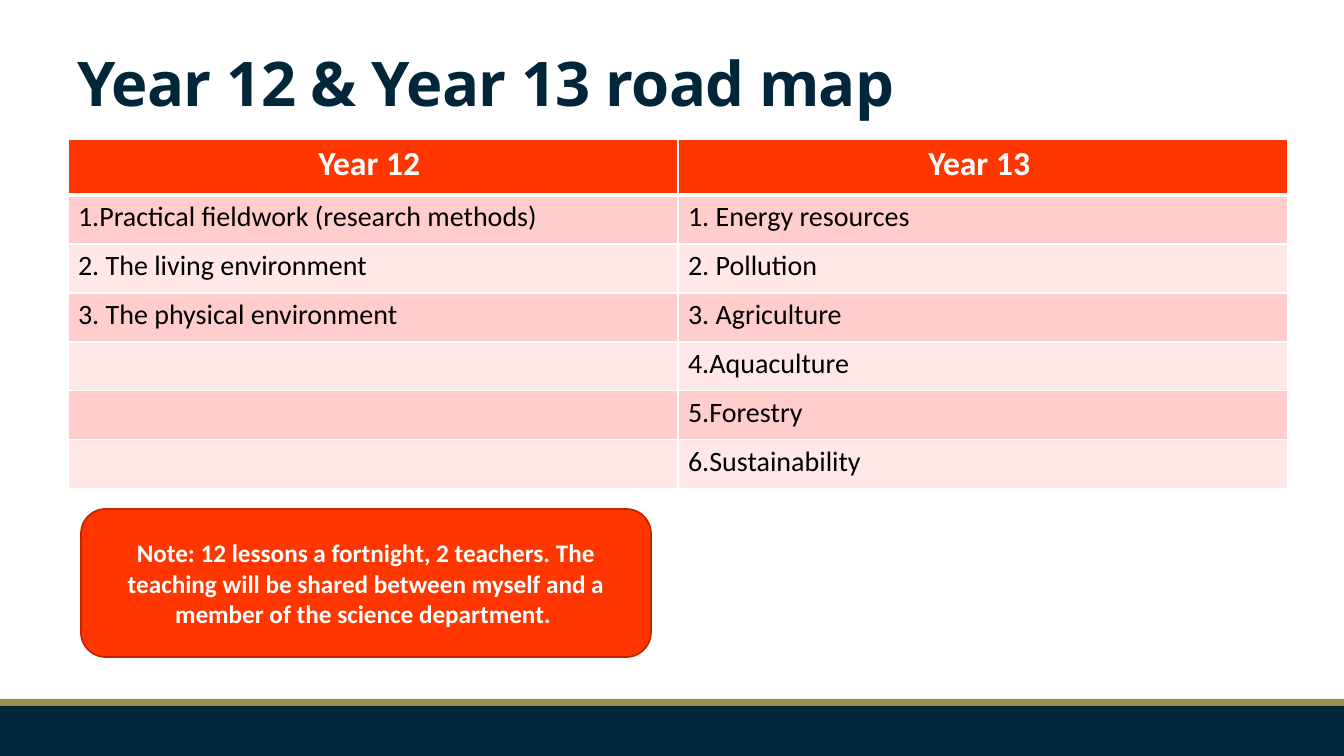
"""Build the Year 12 and Year 13 road map slide."""
from itertools import zip_longest

from lxml.etree import SubElement
from pptx import Presentation
from pptx.dml.color import RGBColor
from pptx.enum.shapes import MSO_SHAPE as Shape
from pptx.enum.text import MSO_ANCHOR as Anchor, PP_ALIGN as Align
from pptx.oxml import parse_xml
from pptx.oxml.ns import nsdecls, qn
from pptx.util import Pt

WIDTH, HEIGHT = 1344, 756
PX = 12192000 / WIDTH
COLORS = {
    "navy": "002639", "gold": "998F4D", "orange": "FF3600", "rust": "BD2800",
    "pink": "FFCECC", "blush": "FFE8E7", "white": "FFFFFF", "black": "000000",
}
YEAR_12 = ["1.Practical fieldwork (research methods)", "2. The living environment",
           "3. The physical environment"]
YEAR_13 = ["1. Energy resources", "2. Pollution", "3. Agriculture",
           "4.Aquaculture", "5.Forestry", "6.Sustainability"]
NOTE = ("Note: 12 lessons a fortnight, 2 teachers. The teaching will be shared "
        "between myself and a member of the science department. ")


def px(*lengths):
    return [round(length * PX) for length in lengths]


def color(name):
    return RGBColor.from_string(COLORS[name])


def write(frame, text, size, ink, bold=True, align=Align.LEFT, font="Calibri"):
    paragraph = frame.paragraphs[0]
    paragraph.alignment = align
    run = paragraph.add_run()
    run.text = text
    run.font.name = font
    run.font.size = Pt(size)
    run.font.bold = bold
    run.font.color.rgb = color(ink)
    return run


def add_block(slide, kind, box, fill, outline=None):
    block = slide.shapes.add_shape(kind, *px(*box))
    block.shadow.inherit = False
    block.fill.solid()
    block.fill.fore_color.rgb = color(fill)
    if outline:
        block.line.color.rgb = color(outline)
        block.line.width = Pt(1.25)
    else:
        block.line.fill.background()
    return block


def set_title(slide, text):
    title = slide.shapes.title
    title.left, title.top, title.width, title.height = px(67, 0, 1092, 124)
    title.text_frame.vertical_anchor = Anchor.BOTTOM
    title.text_frame.word_wrap = True
    run = write(title.text_frame, text, 44, "navy", font="Open Sans")
    run.font._element.set("spc", "-50")
    title.text_frame.paragraphs[0].line_spacing = 0.85


def set_borders(cell, top, bottom):
    properties = cell._tc.get_or_add_tcPr()
    sides = [("lnL", 1), ("lnR", 1), ("lnT", top), ("lnB", bottom)]
    for index, (side, points) in enumerate(sides):
        border = parse_xml(f'<a:{side} {nsdecls("a")} w="{Pt(points)}"/>')
        fill = SubElement(border, qn("a:solidFill"))
        SubElement(fill, qn("a:srgbClr")).set("val", COLORS["white"])
        properties.insert(index, border)


def add_road_map(slide):
    topics = list(zip_longest(YEAR_12, YEAR_13, fillvalue=""))
    rows = [("Year 12 ", "Year 13 "), *topics]
    header, step = 56, 49
    box = px(68, 139, 1220, header + step * len(topics))
    table = slide.shapes.add_table(len(rows), 2, *box).table
    for column in table.columns:
        column.width = px(610)[0]
    for r, texts in enumerate(rows):
        table.rows[r].height = px(step if r else header)[0]
        shade = ("blush", "pink")[r % 2] if r else "orange"
        for c, text in enumerate(texts):
            cell = table.cell(r, c)
            cell.fill.solid()
            cell.fill.fore_color.rgb = color(shade)
            set_borders(cell, 3 if r == 1 else 1, 1 if r else 3)
            if not r:
                write(cell.text_frame, text, 24, "white", align=Align.CENTER)
            elif text:
                write(cell.text_frame, text, 20, "black", bold=False)


def add_note(slide):
    note = add_block(slide, Shape.ROUNDED_RECTANGLE, (81, 509, 570, 148),
                     "orange", "rust")
    note.text_frame.word_wrap = True
    note.text_frame.vertical_anchor = Anchor.MIDDLE
    write(note.text_frame, NOTE, 18, "white", align=Align.CENTER)


def main():
    deck = Presentation()
    deck.slide_width, deck.slide_height = px(WIDTH, HEIGHT)
    slide = deck.slides.add_slide(deck.slide_layouts[5])
    add_block(slide, Shape.RECTANGLE, (0, 706, WIDTH, 50), "navy")
    add_block(slide, Shape.RECTANGLE, (0, 699, WIDTH, 7), "gold")
    set_title(slide, "Year 12 & Year 13 road map")
    add_road_map(slide)
    add_note(slide)
    deck.save("out.pptx")


if __name__ == "__main__":
    main()
